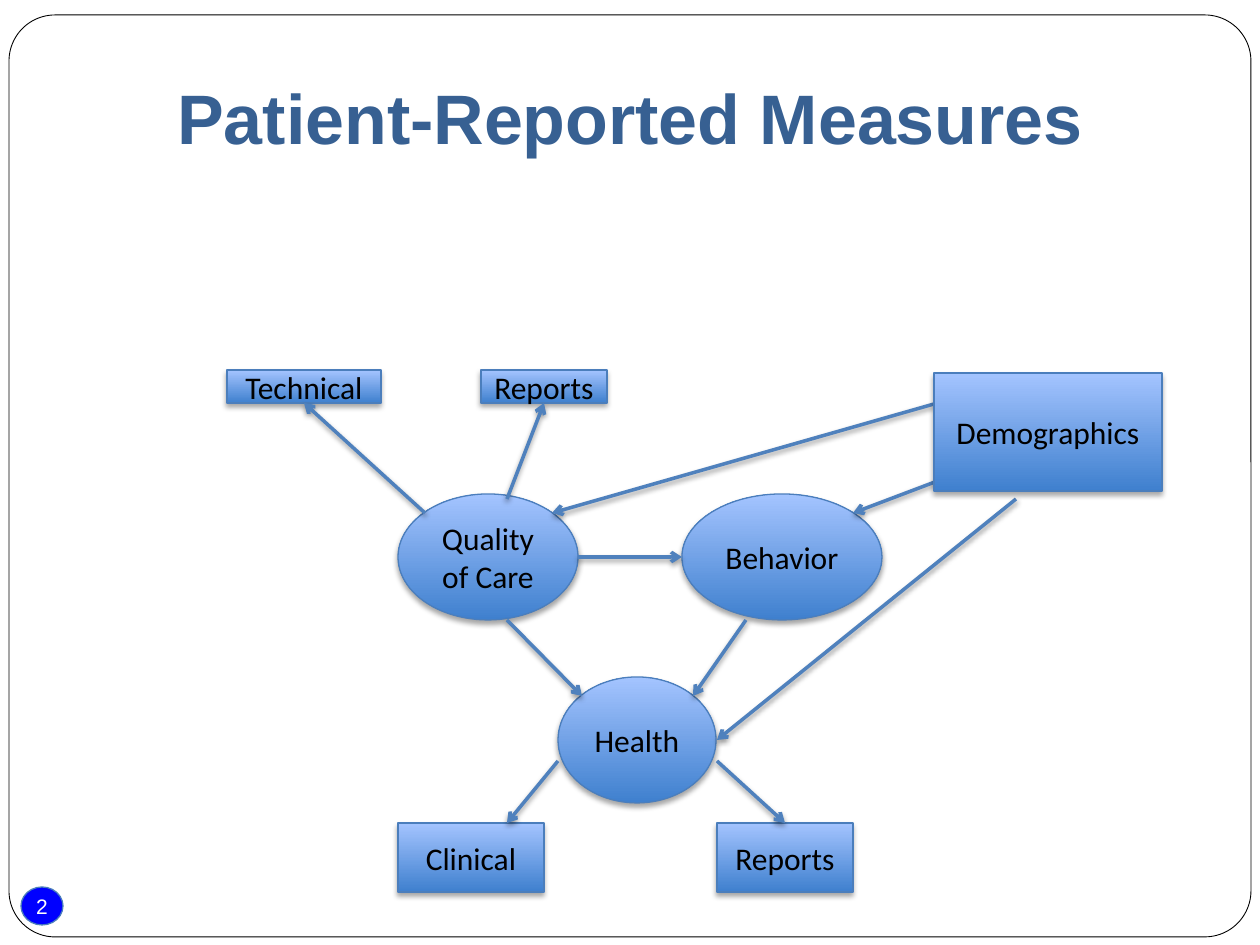
"""Build a slide that maps how patient-reported measures relate."""
from dataclasses import dataclass

from lxml import etree
from pptx import Presentation, util as u
from pptx.dml.color import RGBColor as Rgb
from pptx.enum import shapes, text
from pptx.oxml import parse_xml
from pptx.oxml.ns import nsdecls, qn

SCALE = 914400 / 126
KIND = shapes.MSO_SHAPE


@dataclass(frozen=True)
class Theme:
    title: str = "376092"
    edge: str = "4B7EBC"
    arrow: str = "4F81BD"
    low: str = "3F80CE"
    high: str = "A4C4FF"
    badge: str = "0000FF"
    ink: str = "000000"
    paper: str = "FFFFFF"
    head: str = "Arial"
    body: str = "Calibri"
    big: float = 40
    mid: float = 18
    small: float = 12


THEME = Theme()

OVALS = {
    "health": ("Health", 558, 677, 158, 126),
    "behave": ("Behavior", 682, 494, 200, 126),
    "care": ("Quality of Care", 398, 494, 180, 126),
}
BOXES = {
    "tech": ("Technical", 227, 370, 154, 33),
    "views": ("Reports", 481, 370, 126, 33),
    "clinic": ("Clinical", 398, 823, 146, 69),
    "self": ("Reports", 717, 823, 136, 69),
}
GROUPS = ("Demographics", 934, 373, 228, 118)
LINKS = [
    (578, 557, 682, 557),
    (507, 620, 582, 696),
    (746, 620, 693, 696),
    (934, 404, 552, 513),
    (964, 471, 853, 513),
    (1016, 499, 717, 740),
    (558, 761, 507, 823),
]
JOINS = [
    (507, 499, "views", 2),
    (425, 513, "tech", 2),
    (717, 761, "self", 0),
]


def px(*vals):
    return [u.Emu(round(val * SCALE)) for val in vals]


def shade(item, alpha, dist):
    item._element.spPr.append(parse_xml(
        f'<a:effectLst {nsdecls("a")}><a:outerShdw blurRad="{u.Pt(3.1)}" '
        f'dist="{u.Pt(dist)}" dir="5400000" rotWithShape="0">'
        f'<a:srgbClr val="{THEME.ink}"><a:alpha val="{alpha * 1000}"/>'
        '</a:srgbClr></a:outerShdw></a:effectLst>'))


def stroke(item, color, width):
    item.line.color.rgb = Rgb.from_string(color)
    item.line.width = u.Pt(width)


def write(item, words, font, size, color, bold=False):
    frame = item.text_frame
    frame.text = words
    frame.word_wrap = True
    frame.vertical_anchor = text.MSO_ANCHOR.MIDDLE
    para = frame.paragraphs[0]
    para.alignment = text.PP_ALIGN.CENTER
    para.font.name, para.font.size, para.font.bold = font, u.Pt(size), bold
    para.font.color.rgb = Rgb.from_string(color)


def add_frame(slide):
    item = slide.shapes.add_shape(KIND.ROUNDED_RECTANGLE, *px(9, 15, 1242, 922))
    item.adjustments[0] = 0.05
    item.shadow.inherit = False
    item.fill.background()
    stroke(item, THEME.ink, 0.5)


def add_badge(slide):
    item = slide.shapes.add_shape(KIND.OVAL, *px(21, 887, 42, 38))
    item.shadow.inherit = False
    item.fill.solid()
    item.fill.fore_color.rgb = Rgb.from_string(THEME.badge)
    stroke(item, THEME.edge, 0.75)
    write(item, "2", THEME.head, THEME.small, THEME.paper)
    frame = item.text_frame
    frame.margin_left = frame.margin_right = 0
    frame.margin_top = frame.margin_bottom = 0


def add_title(slide):
    item = slide.shapes.title
    item.left, item.top, item.width, item.height = px(63, 38, 1134, 158)
    write(item, "Patient-Reported Measures", THEME.head, THEME.big,
          THEME.title, True)


def add_node(slide, kind, words, *area):
    item = slide.shapes.add_shape(kind, *px(*area))
    item.fill.gradient()
    item.fill.gradient_angle = 90
    for stop, color in zip(item.fill.gradient_stops, (THEME.low, THEME.high)):
        stop.color.rgb = Rgb.from_string(color)
    stroke(item, THEME.edge, 0.75)
    shade(item, 35, 1.8)
    write(item, words, THEME.body, THEME.mid, THEME.ink)
    return item


def add_link(slide, *ends):
    item = slide.shapes.add_connector(shapes.MSO_CONNECTOR.STRAIGHT, *px(*ends))
    stroke(item, THEME.arrow, 2)
    line = item._element.spPr.find(qn("a:ln"))
    etree.SubElement(line, qn("a:tailEnd"), type="arrow")
    shade(item, 38, 1.6)
    return item


def main():
    deck = Presentation()
    deck.slide_width, deck.slide_height = px(1260, 945)
    slide = deck.slides.add_slide(deck.slide_layouts[5])
    add_badge(slide)
    add_frame(slide)
    add_title(slide)
    for node in OVALS.values():
        add_node(slide, KIND.OVAL, *node)
    boxes = {key: add_node(slide, KIND.RECTANGLE, *node)
             for key, node in BOXES.items()}
    for ends in LINKS:
        add_link(slide, *ends)
    for left, top, key, side in JOINS:
        add_link(slide, left, top, left, top).end_connect(boxes[key], side)
    add_node(slide, KIND.RECTANGLE, *GROUPS)
    deck.save("out.pptx")


if __name__ == "__main__":
    main()
